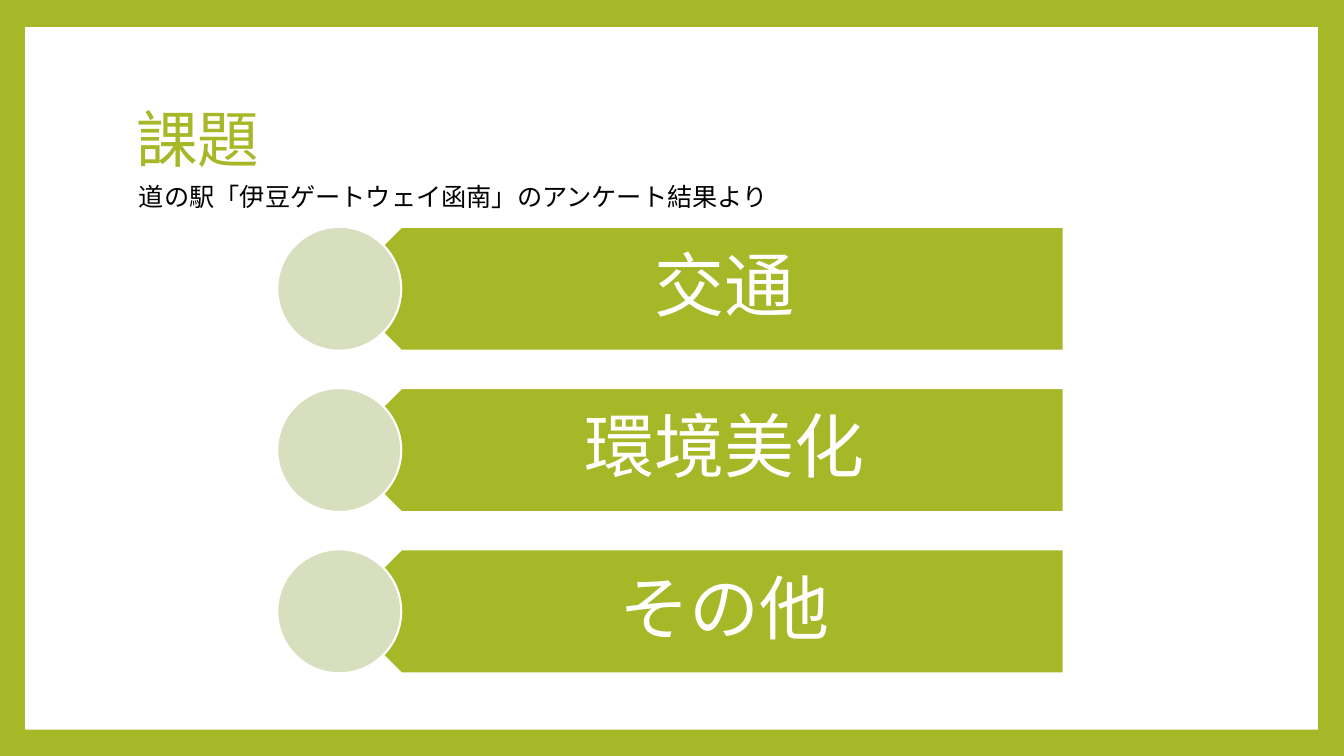
from pptx import Presentation
from pptx.dml.color import RGBColor
from pptx.enum.shapes import MSO_SHAPE
from pptx.enum.text import MSO_ANCHOR, MSO_AUTO_SIZE, PP_ALIGN
from pptx.util import Inches, Pt

THEME = {
    "green": RGBColor.from_string("A6B727"),
    "pale": RGBColor.from_string("D8DFBE"),
    "white": RGBColor.from_string("FFFFFF"),
    "black": RGBColor.from_string("000000"),
    "font": "Calibri",
    "title": Pt(44),
    "note": Pt(18),
    "topic": Pt(50),
    "line": Pt(1.5),
}
TOPICS = ["交通", "環境美化", "その他"]
TOP, PITCH, SIZE = 2.25, 1.6, 1.23  # first row, row step, row height
LEFT, RIGHT = 2.75, 10.55


def add_form(kind, left, top, width, height, fill, edge=None):
    form = slide.shapes.add_shape(
        kind, Inches(left), Inches(top), Inches(width), Inches(height))
    form.shadow.inherit = False
    form.fill.solid()
    form.fill.fore_color.rgb = THEME[fill]
    if edge:
        form.line.color.rgb = THEME[edge]
        form.line.width = THEME["line"]
    else:
        form.line.fill.background()
    return form


def write(box, text, size, color, frame, para):
    """Fill a box with one paragraph; frame and para hold format values."""
    body = box.text_frame
    for name, value in frame.items():
        setattr(body, name, value)
    line = body.paragraphs[0]
    for name, value in para.items():
        setattr(line, name, value)
    run = line.add_run()
    run.text = text
    look = {"name": THEME["font"], "size": THEME[size]}
    for name, value in look.items():
        setattr(run.font, name, value)
    run.font.color.rgb = THEME[color]


deck = Presentation()
deck.slide_width, deck.slide_height = Inches(13.33), Inches(7.5)
slide = deck.slides.add_slide(deck.slide_layouts[5])
slide.background.fill.solid()
slide.background.fill.fore_color.rgb = THEME["green"]

panel = add_form(MSO_SHAPE.RECTANGLE, 0.25, 0.27, 12.82, 6.97, "white")
title = slide.shapes.title
panel.element.addnext(title.element)
place = {"left": 1.25, "top": 0.67, "width": 10.8, "height": 1.48}
for name, value in place.items():
    setattr(title, name, Inches(value))
write(title, "課題", "title", "green",
      {"vertical_anchor": MSO_ANCHOR.MIDDLE, "auto_size": MSO_AUTO_SIZE.NONE},
      {"alignment": PP_ALIGN.LEFT, "line_spacing": 0.9})

for row, topic in enumerate(TOPICS):
    top = TOP + row * PITCH
    start = LEFT + SIZE / 2
    arrow = add_form(MSO_SHAPE.PENTAGON, start, top, RIGHT - start, SIZE,
                     "green", "white")
    arrow.rotation = 180
    label = slide.shapes.add_textbox(
        Inches(3.67), Inches(top), Inches(RIGHT - 3.67), Inches(SIZE))
    write(label, topic, "topic", "white",
          {"word_wrap": True, "vertical_anchor": MSO_ANCHOR.MIDDLE,
           "margin_left": Inches(0.54), "margin_right": Inches(0.39),
           "margin_top": Inches(0.21), "margin_bottom": Inches(0.21)},
          {"alignment": PP_ALIGN.CENTER, "line_spacing": 0.9,
           "space_after": Pt(17.5)})
    add_form(MSO_SHAPE.OVAL, LEFT, top, SIZE, SIZE, "pale", "white")

note = slide.shapes.add_textbox(
    Inches(1.28), Inches(1.75), Inches(7.72), Inches(0.4))
write(note, "道の駅「伊豆ゲートウェイ函南」のアンケート結果より", "note", "black",
      {"word_wrap": True, "auto_size": MSO_AUTO_SIZE.SHAPE_TO_FIT_TEXT}, {})

deck.save("out.pptx")
